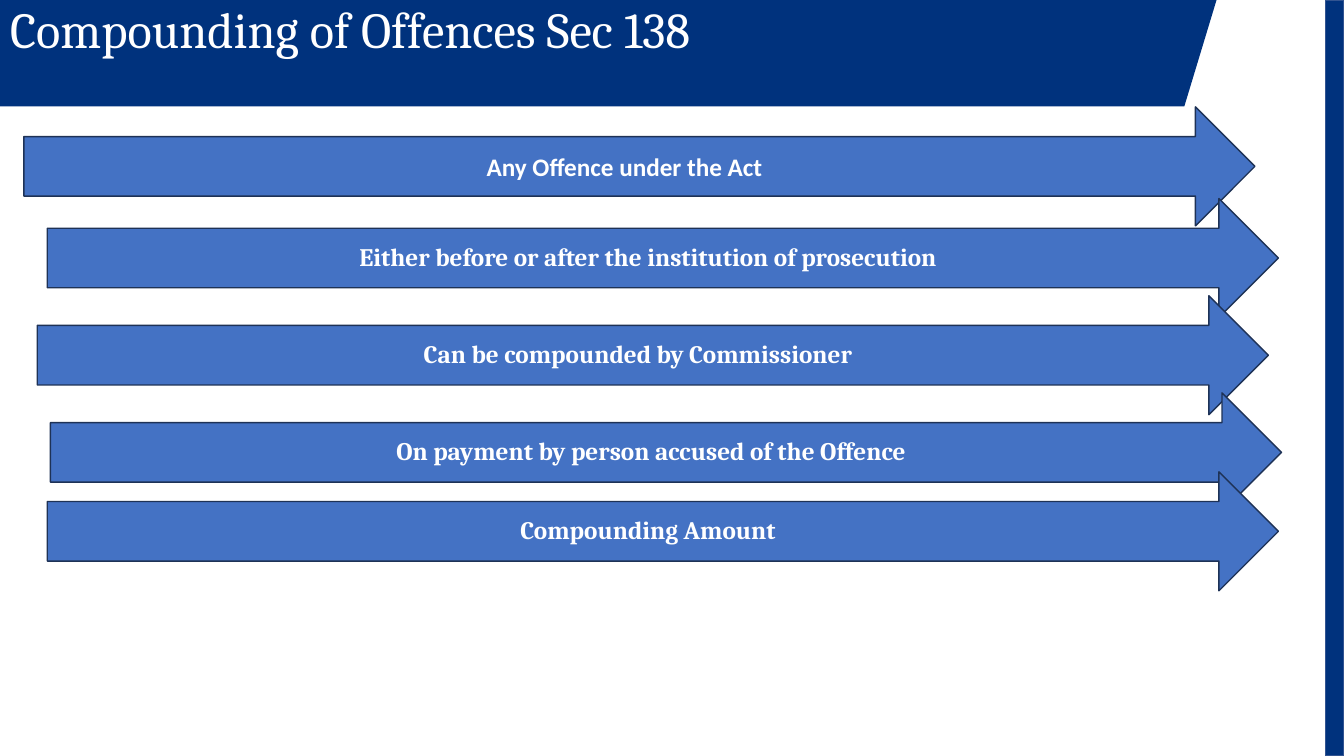
from typing import NamedTuple

from pptx import Presentation
from pptx.dml.color import RGBColor
from pptx.enum.shapes import MSO_SHAPE as Preset
from pptx.enum.text import MSO_ANCHOR as Anchor, MSO_AUTO_SIZE as AutoSize, PP_ALIGN as Align
from pptx.shapes.autoshape import Shape
from pptx.slide import Slide
from pptx.text.text import TextFrame
from pptx.util import Pt

COLORS = {
    "navy": "00327D",
    "navy_edge": "325491",
    "arrow": "4472C4",
    "arrow_edge": "1E3256",
    "text": "FFFFFF",
}
SLIDE_WIDTH, SLIDE_HEIGHT = 960, 540
BANNER_OUTLINE = [(0, 0), (0, 75.6), (846, 75.6), (869, 0)]
SIDE_BAR_LEFT = 946.8
ARROW_WIDTH, ARROW_HEIGHT = 879.4, 85


class Point(NamedTuple):
    text: str
    left: float
    top: float
    font: str = "Cambria"
    line_spacing: float = 0.9


POINTS = [
    Point("Any Offence under the Act", 17, 76.3, "Calibri", 1.0),
    Point("Either before or after the institution of prosecution", 33.8, 141.8),
    Point("Can be compounded by Commissioner", 26.6, 211.2),
    Point("On payment by person accused of the Offence", 36, 280.6),
    Point("Compounding Amount", 33.8, 337),
]


def color(name: str) -> RGBColor:
    return RGBColor.from_string(COLORS[name])


def paint(shape: Shape, fill: str, edge: str | None = None) -> None:
    shape.shadow.inherit = False
    shape.fill.solid()
    shape.fill.fore_color.rgb = color(fill)
    if edge:
        shape.line.color.rgb = color(edge)
        shape.line.width = Pt(1)
    else:
        shape.line.fill.background()


def write(frame: TextFrame, text: str, font: str, size: float, bold: bool,
          align: Align, anchor: Anchor, line_spacing: float) -> None:
    frame.text = text
    frame.word_wrap = True
    frame.auto_size = AutoSize.NONE
    frame.vertical_anchor = anchor
    paragraph = frame.paragraphs[0]
    paragraph.alignment = align
    paragraph.line_spacing = line_spacing
    run_font = paragraph.runs[0].font
    run_font.name = font
    run_font.size = Pt(size)
    run_font.bold = bold
    run_font.color.rgb = color("text")


def add_frame(slide: Slide) -> None:
    """Draw the slanted banner and the bar along the right edge."""
    builder = slide.shapes.build_freeform(*BANNER_OUTLINE[0], scale=Pt(1))
    builder.add_line_segments(BANNER_OUTLINE[1:], close=True)
    paint(builder.convert_to_shape(), "navy")

    side_bar = slide.shapes.add_shape(
        Preset.RECTANGLE, Pt(SIDE_BAR_LEFT), 0,
        Pt(SLIDE_WIDTH - SIDE_BAR_LEFT), Pt(SLIDE_HEIGHT))
    paint(side_bar, "navy", "navy_edge")


def place_title(slide: Slide, text: str) -> None:
    """Fill the title placeholder and bring it in front of the banner."""
    title = slide.shapes.title
    title.left, title.top = 0, 0
    title.width, title.height = Pt(861), Pt(76.3)
    write(title.text_frame, text, "Cambria", 36, False, Align.LEFT, Anchor.TOP, 0.9)
    slide.shapes._spTree.append(title._element)


def add_arrow(slide: Slide, point: Point) -> None:
    arrow = slide.shapes.add_shape(
        Preset.RIGHT_ARROW, Pt(point.left), Pt(point.top),
        Pt(ARROW_WIDTH), Pt(ARROW_HEIGHT))
    paint(arrow, "arrow", "arrow_edge")
    write(arrow.text_frame, point.text, point.font, 18, True,
          Align.CENTER, Anchor.MIDDLE, point.line_spacing)


def main() -> None:
    deck = Presentation()
    deck.slide_width, deck.slide_height = Pt(SLIDE_WIDTH), Pt(SLIDE_HEIGHT)
    slide = deck.slides.add_slide(deck.slide_layouts.get_by_name("Title Only"))
    add_frame(slide)
    place_title(slide, "Compounding of Offences Sec 138")
    for point in POINTS:
        add_arrow(slide, point)
    deck.save("out.pptx")


if __name__ == "__main__":
    main()
